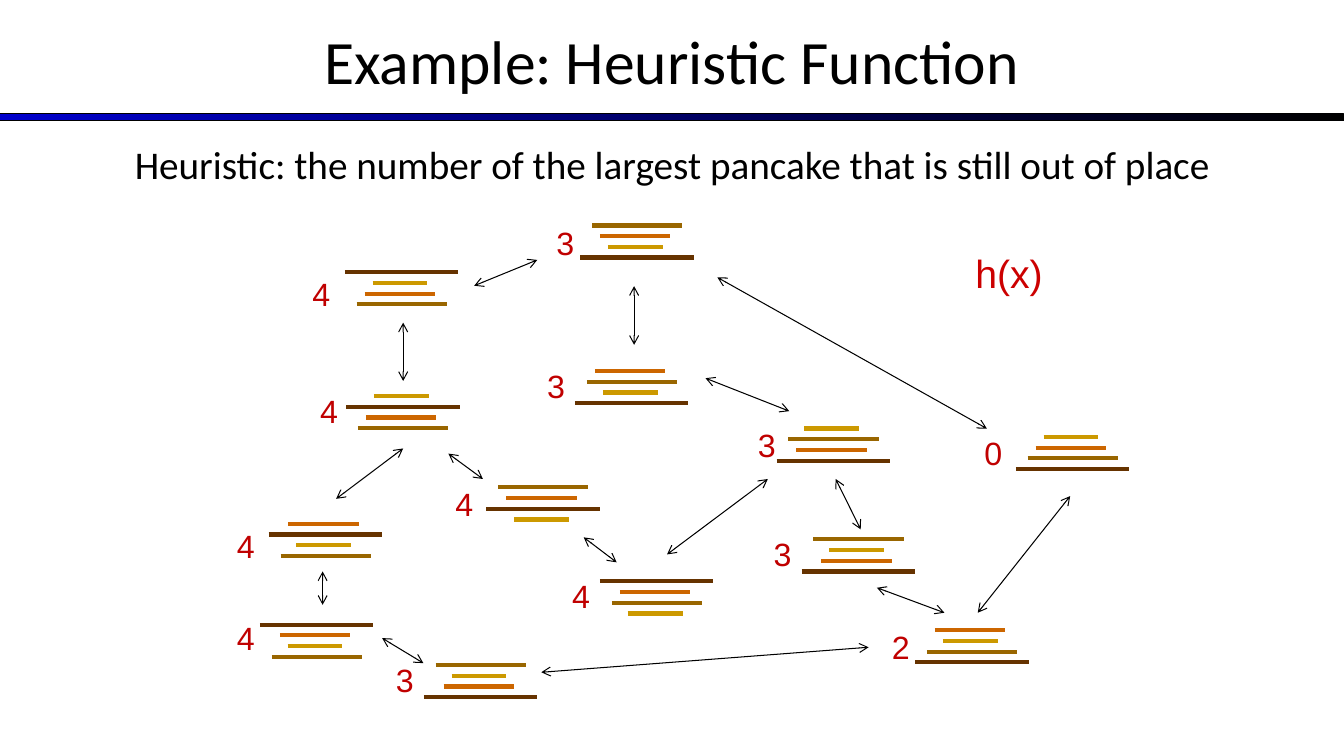
from dataclasses import dataclass

from lxml import etree
from pptx import Presentation
from pptx.dml.color import RGBColor as Rgb
from pptx.enum.shapes import MSO_CONNECTOR as Connector, MSO_SHAPE as Shape
from pptx.enum.text import MSO_ANCHOR as Anchor, PP_ALIGN as Align
from pptx.oxml.ns import qn
from pptx.util import Cm, Pt

SLIDE_WIDTH, SLIDE_HEIGHT = 33.87, 19.05


@dataclass(frozen=True)
class Theme:
    text_font: str = "Calibri"
    label_font: str = "Arial"
    title_size: float = 44
    body_size: float = 28
    cost_size: float = 23
    ink: str = "000000"
    bar_start: str = "0000CC"
    cost: str = "C00000"
    function: str = "CC0000"
    pancakes: tuple = ("CC9900", "CC6600", "996600", "663300")  # smallest first
    pancake_weight: float = 3
    thin_weight: float = 0.75


class HeuristicSlide:
    # Pancake number: (inset from the largest pancake's left edge, width)
    PANCAKES = {1: (0.7, 1.38), 2: (0.5, 1.77), 3: (0.3, 2.27), 4: (0, 2.86)}
    PANCAKE_STEP = 0.27

    def __init__(self, deck, theme):
        self.theme = theme
        self.slide = deck.slides.add_slide(deck.slide_layouts[5])
        self.shapes = self.slide.shapes

    def fill_text(self, holder, text, font, size, color, align=Align.LEFT,
                  anchor=Anchor.TOP):
        frame = holder.text_frame
        frame_format = {
            "word_wrap": True, "vertical_anchor": anchor,
            "margin_left": Cm(0.25), "margin_right": Cm(0.25),
            "margin_top": Cm(0.13), "margin_bottom": Cm(0.13),
        }
        for name, value in frame_format.items():
            setattr(frame, name, value)
        paragraph = frame.paragraphs[0]
        paragraph.alignment = align
        run = paragraph.add_run()
        run.text = text
        for name, value in {"name": font, "size": Pt(size), "bold": False}.items():
            setattr(run.font, name, value)
        run.font.color.rgb = Rgb.from_string(color)

    def title(self, text, left, top, width, height):
        heading = self.shapes.title
        place = {"left": left, "top": top, "width": width, "height": height}
        for name, value in place.items():
            setattr(heading, name, Cm(value))
        self.fill_text(heading, text, self.theme.text_font, self.theme.title_size,
                       self.theme.ink, Align.CENTER, Anchor.MIDDLE)

    def text(self, text, left, top, width, height, *style):
        box = self.shapes.add_textbox(Cm(left), Cm(top), Cm(width), Cm(height))
        self.fill_text(box, text, *style)

    def bar(self, left, top, width, height):
        divider = self.shapes.add_shape(
            Shape.RECTANGLE, Cm(left), Cm(top), Cm(width), Cm(height))
        divider.shadow.inherit = False
        divider.fill.gradient()
        divider.fill.gradient_angle = 0
        for stop, color in zip(divider.fill.gradient_stops,
                               (self.theme.bar_start, self.theme.ink)):
            stop.color.rgb = Rgb.from_string(color)
        divider.line.color.rgb = Rgb.from_string(self.theme.ink)
        divider.line.width = Pt(self.theme.thin_weight)

    def line(self, x1, y1, x2, y2, color, weight):
        stroke = self.shapes.add_connector(
            Connector.STRAIGHT, Cm(x1), Cm(y1), Cm(x2), Cm(y2))
        stroke.line.color.rgb = Rgb.from_string(color)
        stroke.line.width = Pt(weight)
        etree.SubElement(stroke._element.spPr, qn("a:effectLst"))
        return stroke

    def flip_arrow(self, x1, y1, x2, y2):
        arrow = self.line(x1, y1, x2, y2, self.theme.ink, self.theme.thin_weight)
        outline = arrow._element.spPr.find(qn("a:ln"))
        for end in ("a:headEnd", "a:tailEnd"):
            etree.SubElement(outline, qn(end), type="arrow")

    def stack(self, order, left, top):
        for row, pancake in enumerate(order):
            inset, width = self.PANCAKES[pancake]
            x, y = left + inset, top + row * self.PANCAKE_STEP
            self.line(x, y, x + width, y, self.theme.pancakes[pancake - 1],
                      self.theme.pancake_weight)

    def cost(self, value, left, top):
        self.text(str(value), left, top, 0.84, 1.24, self.theme.label_font,
                  self.theme.cost_size, self.theme.cost)


# Pancakes from top to bottom, stack position, h(x), position of h(x)
STATES = [
    ((4, 1, 2, 3), (8.69, 6.86), 4, (7.62, 6.78)),
    ((1, 4, 2, 3), (8.72, 9.98), 4, (7.82, 9.73)),
    ((3, 2, 1, 4), (14.62, 5.68), 3, (13.77, 5.51)),
    ((2, 4, 1, 3), (6.77, 13.2), 4, (5.72, 13.13)),
    ((3, 2, 4, 1), (12.26, 12.28), 4, (11.23, 12.07)),
    ((1, 2, 3, 4), (25.6, 11.01), 0, (24.56, 10.8)),
    ((2, 3, 1, 4), (14.49, 9.35), 3, (13.54, 9.09)),
    ((4, 2, 3, 1), (15.12, 14.65), 4, (14.17, 14.4)),
    ((4, 2, 1, 3), (6.55, 15.74), 4, (5.72, 15.44)),
    ((3, 1, 2, 4), (10.68, 16.76), 3, (9.73, 16.51)),
    ((1, 3, 2, 4), (19.57, 10.8), 3, (18.85, 10.59)),
    ((2, 1, 3, 4), (23.06, 15.88), 2, (22.23, 15.67)),
    ((3, 1, 2, 4), (20.2, 13.59), 3, (19.25, 13.34)),
]

# Flips between states: x1, y1, x2, y2
FLIPS = [
    (13.54, 6.55, 11.95, 7.2),
    (10.16, 9.6, 10.16, 8.13),
    (8.47, 12.57, 10.16, 11.3),
    (12.17, 12.07, 11.3, 11.43),
    (8.13, 15.24, 8.13, 14.4),
    (10.67, 16.71, 9.63, 16.08),
    (21.89, 16.31, 13.64, 16.94),
    (15.54, 14.17, 14.71, 13.54),
    (19.35, 12.07, 16.81, 13.97),
    (17.78, 9.53, 19.89, 10.36),
    (15.98, 7.21, 15.98, 8.69),
    (24.87, 10.8, 18.08, 6.99),
    (21.06, 12.07, 21.69, 13.34),
    (22.1, 14.81, 23.8, 15.44),
    (24.64, 15.44, 26.97, 12.5),
]


def main():
    deck = Presentation()
    deck.slide_width, deck.slide_height = Cm(SLIDE_WIDTH), Cm(SLIDE_HEIGHT)
    theme = Theme()
    page = HeuristicSlide(deck, theme)

    # Heading and definition
    page.bar(0, 2.87, SLIDE_WIDTH, 0.18)
    page.title("Example: Heuristic Function", 0, -0.08, SLIDE_WIDTH, 3.18)
    page.text("Heuristic: the number of the largest pancake that is still out of place",
              0, 3.4, SLIDE_WIDTH, 1.45, theme.text_font, theme.body_size, theme.ink,
              Align.CENTER)

    # State graph
    for order, stack_at, value, cost_at in STATES:
        page.stack(order, *stack_at)
        page.cost(value, *cost_at)
    for flip in FLIPS:
        page.flip_arrow(*flip)

    # Name of the red values
    page.text("h(x)", 24.33, 6.15, 3.18, 1.45, theme.label_font, theme.body_size,
              theme.function)

    deck.save("out.pptx")


if __name__ == "__main__":
    main()
